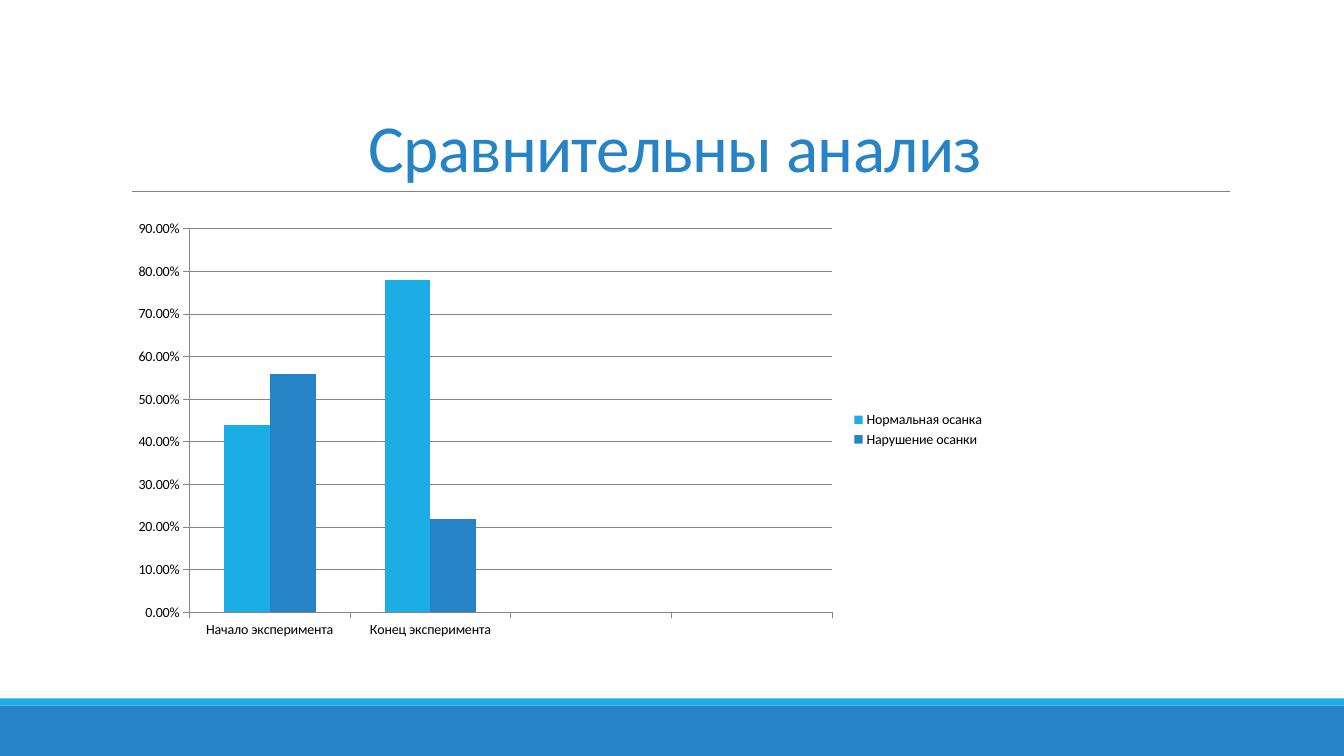
"""Build a slide comparing posture at the start and end of an experiment."""
from pptx import Presentation
from pptx.chart.data import CategoryChartData
from pptx.dml.color import RGBColor
from pptx.enum.chart import XL_CHART_TYPE, XL_LEGEND_POSITION, XL_TICK_MARK
from pptx.enum.shapes import MSO_CONNECTOR, MSO_SHAPE
from pptx.enum.text import MSO_ANCHOR, MSO_AUTO_SIZE, PP_ALIGN
from pptx.oxml.xmlchemy import OxmlElement
from pptx.util import Cm, Pt

COLORS = {"blue": "2683C6", "cyan": "1CADE4", "gray": "808080",
          "axis": "868686", "black": "000000"}
FONT = "Calibri"


def color(name):
    return RGBColor.from_string(COLORS[name])


deck = Presentation()
deck.slide_width, deck.slide_height = Cm(33.87), Cm(19.05)
slide = deck.slides.add_slide(deck.slide_layouts[5])
shapes = slide.shapes

for top, height, name in [(17.78, 1.27, "blue"), (17.6, 0.18, "cyan")]:
    band = shapes.add_shape(MSO_SHAPE.RECTANGLE, 0, Cm(top), deck.slide_width, Cm(height))
    band.shadow.inherit = False
    band.fill.solid()
    band.fill.fore_color.rgb = color(name)
    band.line.fill.background()

rule = shapes.add_connector(MSO_CONNECTOR.STRAIGHT, Cm(3.32), Cm(4.82), Cm(31), Cm(4.82))
rule.line.color.rgb = color("gray")
rule.line.width = Pt(0.5)
rule._element.spPr.append(OxmlElement("a:effectLst"))

title = shapes.title
title.left, title.top, title.width, title.height = Cm(3.05), Cm(0.79), Cm(27.94), Cm(4.03)
frame = title.text_frame
frame.text = "Сравнительны анализ"
frame.auto_size = MSO_AUTO_SIZE.NONE
frame.vertical_anchor = MSO_ANCHOR.BOTTOM
line = frame.paragraphs[0]
line.alignment = PP_ALIGN.CENTER
line.line_spacing = 0.85
run = line.runs[0]
run.font.name = FONT
run.font.size = Pt(48)
run.font.color.rgb = color("blue")
run._r.get_or_add_rPr().set("spc", "-50")

data = CategoryChartData(number_format="0.00%")
data.categories = ["Начало эксперимента", "Конец эксперимента", "", ""]
data.add_series("Нормальная осанка", [0.44, 0.78, None, None])
data.add_series("Нарушение осанки", [0.56, 0.22, None, None])
chart = shapes.add_chart(XL_CHART_TYPE.COLUMN_CLUSTERED, Cm(3.05), Cm(5.35),
                         Cm(22.02), Cm(10.95), data).chart
chart.has_title = False
chart.font.name = FONT
chart.font.size = Pt(10)
chart.font.color.rgb = color("black")
chart.has_legend = True
chart.legend.position = XL_LEGEND_POSITION.RIGHT
chart.legend.include_in_layout = False

plot = chart.plots[0]
plot.gap_width = 150
plot.overlap = 0
plot.vary_by_categories = False
for series, name in zip(plot.series, ["cyan", "blue"]):
    series.format.fill.solid()
    series.format.fill.fore_color.rgb = color(name)

for axis in (chart.category_axis, chart.value_axis):
    axis.major_tick_mark = XL_TICK_MARK.OUTSIDE
    axis.minor_tick_mark = XL_TICK_MARK.NONE
    axis.format.line.color.rgb = color("axis")
    axis.format.line.width = Pt(0.75)

scale = chart.value_axis
scale.minimum_scale, scale.maximum_scale, scale.major_unit = 0, 0.9, 0.1
scale.tick_labels.number_format = "0.00%"
scale.tick_labels.number_format_is_linked = False
scale.has_major_gridlines = True
scale.major_gridlines.format.line.color.rgb = color("axis")
scale.major_gridlines.format.line.width = Pt(0.75)

deck.save("out.pptx")
